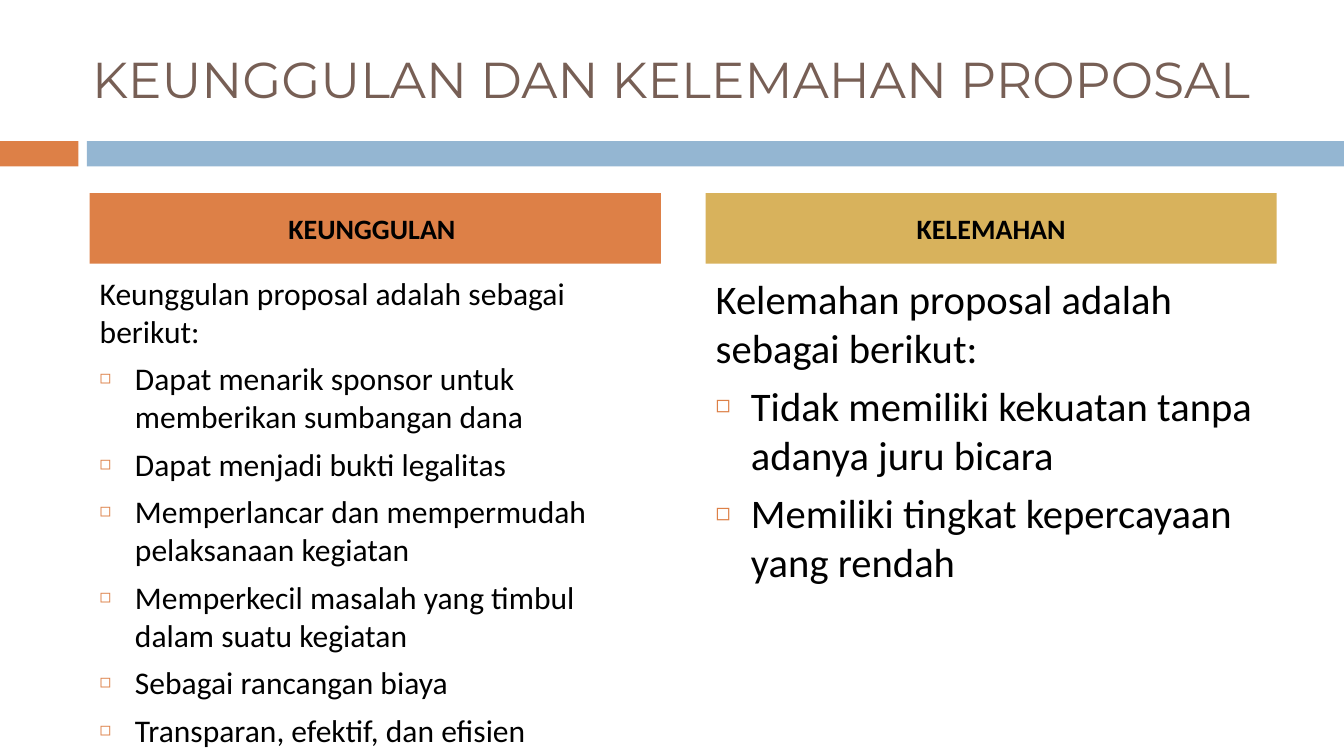
from lxml.etree import SubElement
from pptx import Presentation
from pptx.dml.color import RGBColor
from pptx.enum.shapes import MSO_SHAPE
from pptx.enum.text import MSO_ANCHOR, MSO_AUTO_SIZE, PP_ALIGN
from pptx.oxml.ns import qn
from pptx.util import Pt

ORANGE, BLUE, GOLD = "DD8047", "94B6D2", "D8B25C"
BROWN, BLACK = "775F55", "000000"
LAYOUT_COMPARISON = 4
INDENT = 25.2


def set_text(box, lines, font, size, color, bold=False, align=PP_ALIGN.LEFT,
             anchor=MSO_ANCHOR.TOP, before=7):
    """Fill a placeholder; every line after the first gets a square bullet."""
    frame = box.text_frame
    frame.text = "\n".join(lines)
    frame.word_wrap = True
    frame.auto_size = MSO_AUTO_SIZE.NONE
    frame.vertical_anchor = anchor
    for number, para in enumerate(frame.paragraphs):
        para.alignment = align
        para.space_before = Pt(before)
        properties = para._p.get_or_add_pPr()
        indent = Pt(INDENT) if number else 0
        properties.set("marL", str(indent))
        properties.set("indent", str(-indent))
        if number:
            bullet_color = SubElement(properties, qn("a:buClr"))
            SubElement(bullet_color, qn("a:srgbClr"), val=ORANGE)
            SubElement(properties, qn("a:buSzPct"), val="60000")
            SubElement(properties, qn("a:buChar"), char="◻")
        else:
            SubElement(properties, qn("a:buNone"))
        para.font.name = font
        para.font.size = Pt(size)
        para.font.bold = bold
        para.font.color.rgb = RGBColor.from_string(color)


def place(shape, left, top, width, height, fill=None):
    shape.left, shape.top = Pt(left), Pt(top)
    shape.width, shape.height = Pt(width), Pt(height)
    if fill:
        shape.fill.solid()
        shape.fill.fore_color.rgb = RGBColor.from_string(fill)


deck = Presentation()
deck.slide_width, deck.slide_height = Pt(960), Pt(540)
page = deck.slides.add_slide(deck.slide_layouts[LAYOUT_COMPARISON])

# Band under the title
for left, width, color in [(0, 56, ORANGE), (62, 898, BLUE)]:
    bar = page.shapes.add_shape(MSO_SHAPE.RECTANGLE, 0, 0, 0, 0)
    place(bar, left, 100.8, width, 18, color)
    bar.line.fill.background()
    bar.shadow.inherit = False

title = page.shapes.title
place(title, 56, 21.6, 856, 68.4)
set_text(title, ["KEUNGGULAN DAN KELEMAHAN PROPOSAL "], "Montserrat", 36, BROWN,
         align=PP_ALIGN.CENTER, anchor=MSO_ANCHOR.MIDDLE, before=0)

# Two columns: left edge, heading, heading fill, text size, lines
columns = [
    (64, "KEUNGGULAN ", ORANGE, 22.5, [
        "Keunggulan proposal adalah sebagai berikut:",
        "Dapat menarik sponsor untuk memberikan sumbangan dana",
        "Dapat menjadi bukti legalitas",
        "Memperlancar dan mempermudah pelaksanaan kegiatan",
        "Memperkecil masalah yang timbul dalam suatu kegiatan",
        "Sebagai rancangan biaya",
        "Transparan, efektif, dan efisien",
    ]),
    (504, "KELEMAHAN", GOLD, 29, [
        "Kelemahan proposal adalah sebagai berikut:",
        "Tidak memiliki kekuatan tanpa adanya juru bicara",
        "Memiliki tingkat kepercayaan yang rendah",
    ]),
]
for number, (left, heading, color, size, lines) in enumerate(columns):
    header = page.placeholders[1 + 2 * number]
    body = page.placeholders[2 + 2 * number]
    place(header, left, 138, 408, 50.4, color)
    set_text(header, [heading], "Calibri", 20, BLACK, bold=True,
             align=PP_ALIGN.CENTER, anchor=MSO_ANCHOR.MIDDLE)
    place(body, left, 192, 408, 282)
    set_text(body, lines, "Calibri", size, BLACK)

deck.save("out.pptx")
